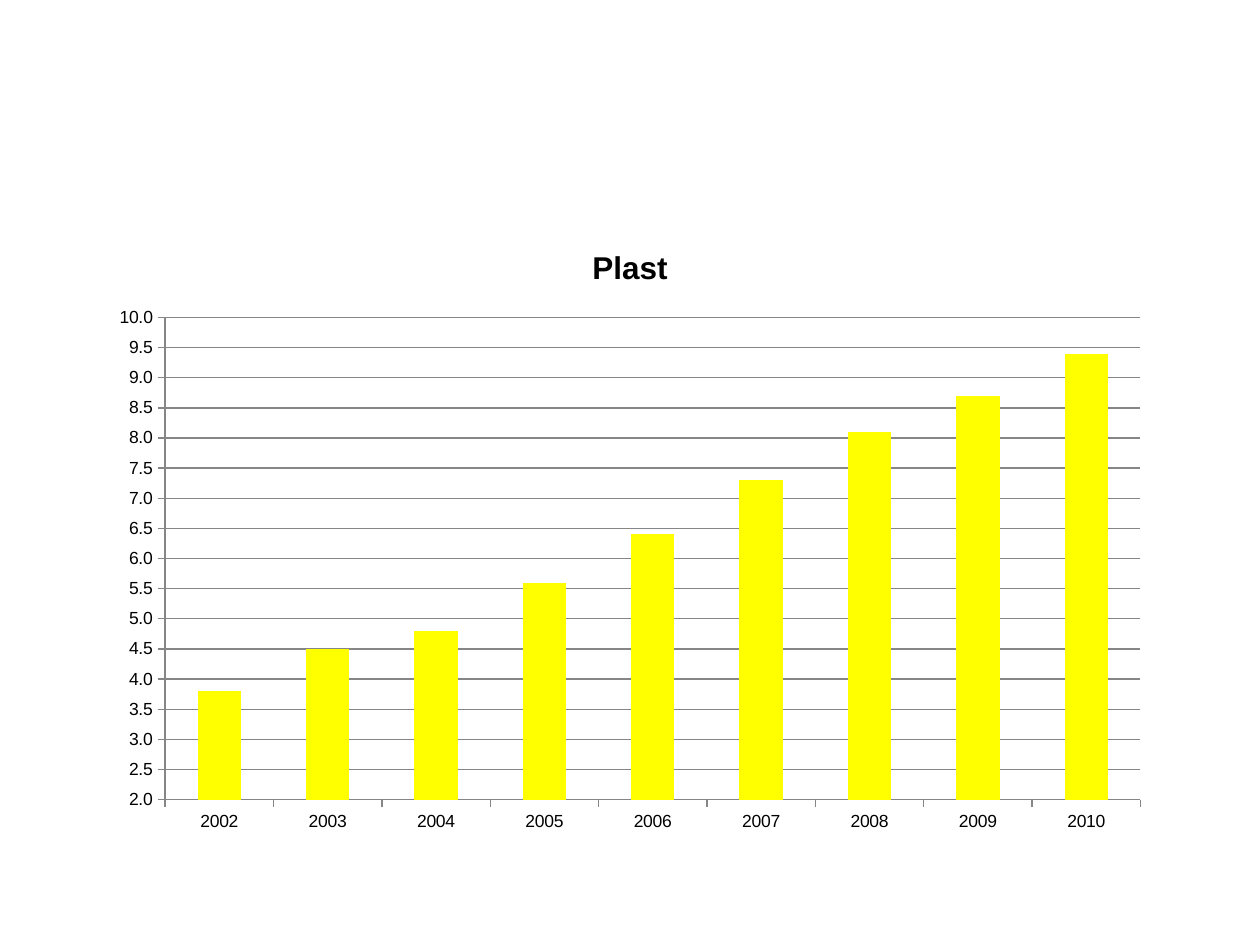
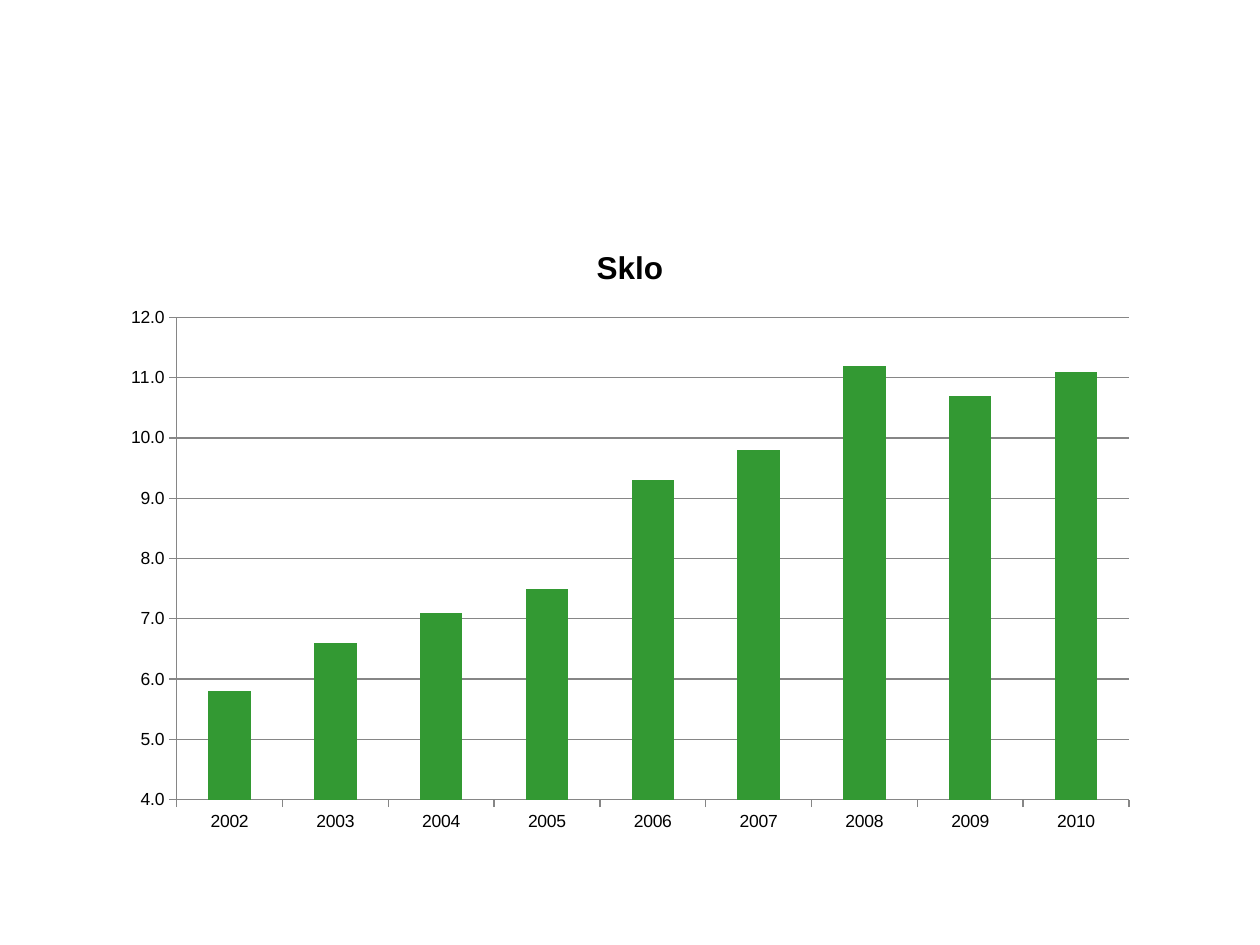
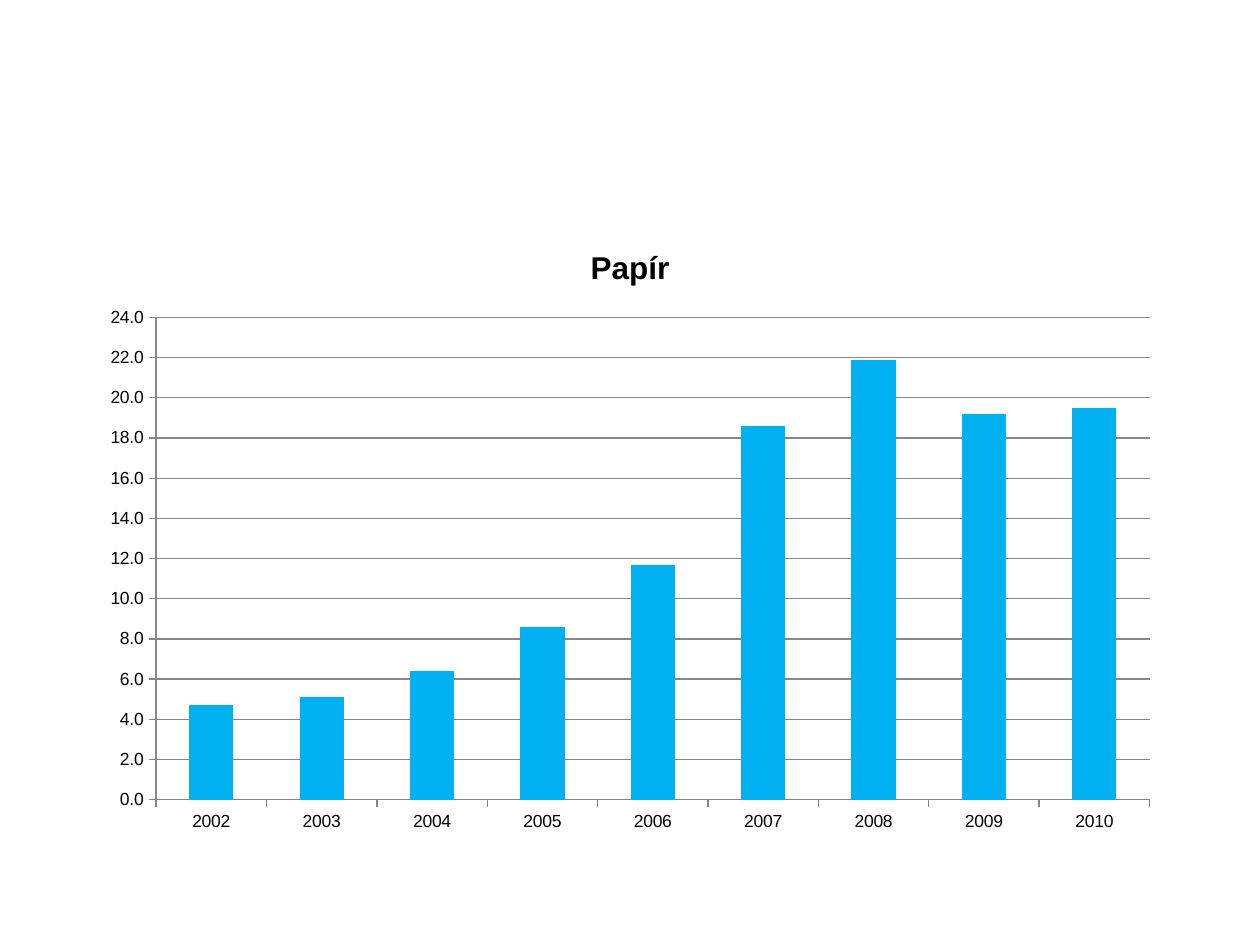
from pptx import Presentation
from pptx.chart.data import CategoryChartData
from pptx.dml.color import RGBColor
from pptx.enum.chart import XL_CHART_TYPE as ChartType, XL_TICK_MARK as Tick
from pptx.util import Inches, Pt

COLORS = {
    "text": "000000",
    "line": "868686",
    "plastic": "FFFF00",
    "glass": "339933",
    "paper": "00B0F0",
}
FONT = "Arial"
SLIDE_W, SLIDE_H = 10, 7.5
CHART_TOP, CHART_H = 1.76, 4.94
YEARS = [str(year) for year in range(2002, 2011)]


def rgb(name):
    return RGBColor.from_string(COLORS[name])


def style_font(font, size, bold=False):
    font.name = FONT
    font.size = Pt(size)
    font.bold = bold
    font.color.rgb = rgb("text")


def style_line(line):
    line.color.rgb = rgb("line")
    line.width = Pt(0.75)


def style_axis(axis):
    axis.major_tick_mark = Tick.OUTSIDE
    axis.minor_tick_mark = Tick.NONE
    style_line(axis.format.line)
    style_font(axis.tick_labels.font, 10)


def set_scale(axis, low, high, step):
    axis.minimum_scale = low
    axis.maximum_scale = high
    axis.major_unit = step
    axis.has_major_gridlines = True
    style_line(axis.major_gridlines.format.line)
    axis.tick_labels.number_format = "0.0"
    axis.tick_labels.number_format_is_linked = False


def set_title(chart, title):
    chart.has_title = True
    chart.chart_title.include_in_layout = False
    p = chart.chart_title.text_frame.paragraphs[0]
    r = p.add_run()
    r.text = title
    style_font(r.font, 18, bold=True)


def add_chart_slide(prs, title, series_name, color, width, scale, values):
    s = prs.slides.add_slide(prs.slide_layouts[6])
    data = CategoryChartData(number_format="0.0")
    data.categories = YEARS
    data.add_series(series_name, values)
    chart = s.shapes.add_chart(
        ChartType.COLUMN_CLUSTERED,
        Inches((SLIDE_W - width) / 2), Inches(CHART_TOP),
        Inches(width), Inches(CHART_H), data,
    ).chart
    chart.has_legend = False
    style_font(chart.font, 10)
    set_title(chart, title)
    style_axis(chart.category_axis)
    style_axis(chart.value_axis)
    set_scale(chart.value_axis, *scale)
    plot = chart.plots[0]
    plot.gap_width = 150
    plot.vary_by_categories = False
    fill = plot.series[0].format.fill
    fill.solid()
    fill.fore_color.rgb = rgb(color)


def main():
    prs = Presentation()
    prs.slide_width = Inches(SLIDE_W)
    prs.slide_height = Inches(SLIDE_H)
    add_chart_slide(prs, "Plast", "Plast", "plastic", 8.44, (2, 10, 0.5),
                    [3.8, 4.5, 4.8, 5.6, 6.4, 7.3, 8.1, 8.7, 9.4])
    add_chart_slide(prs, "Sklo", "Series 1", "glass", 8.25, (4, 12, 1),
                    [5.8, 6.6, 7.1, 7.5, 9.3, 9.8, 11.2, 10.7, 11.1])
    add_chart_slide(prs, "Papír", "Papír", "paper", 8.59, (0, 24, 2),
                    [4.7, 5.1, 6.4, 8.6, 11.7, 18.6, 21.9, 19.2, 19.5])
    prs.save("out.pptx")


if __name__ == "__main__":
    main()
